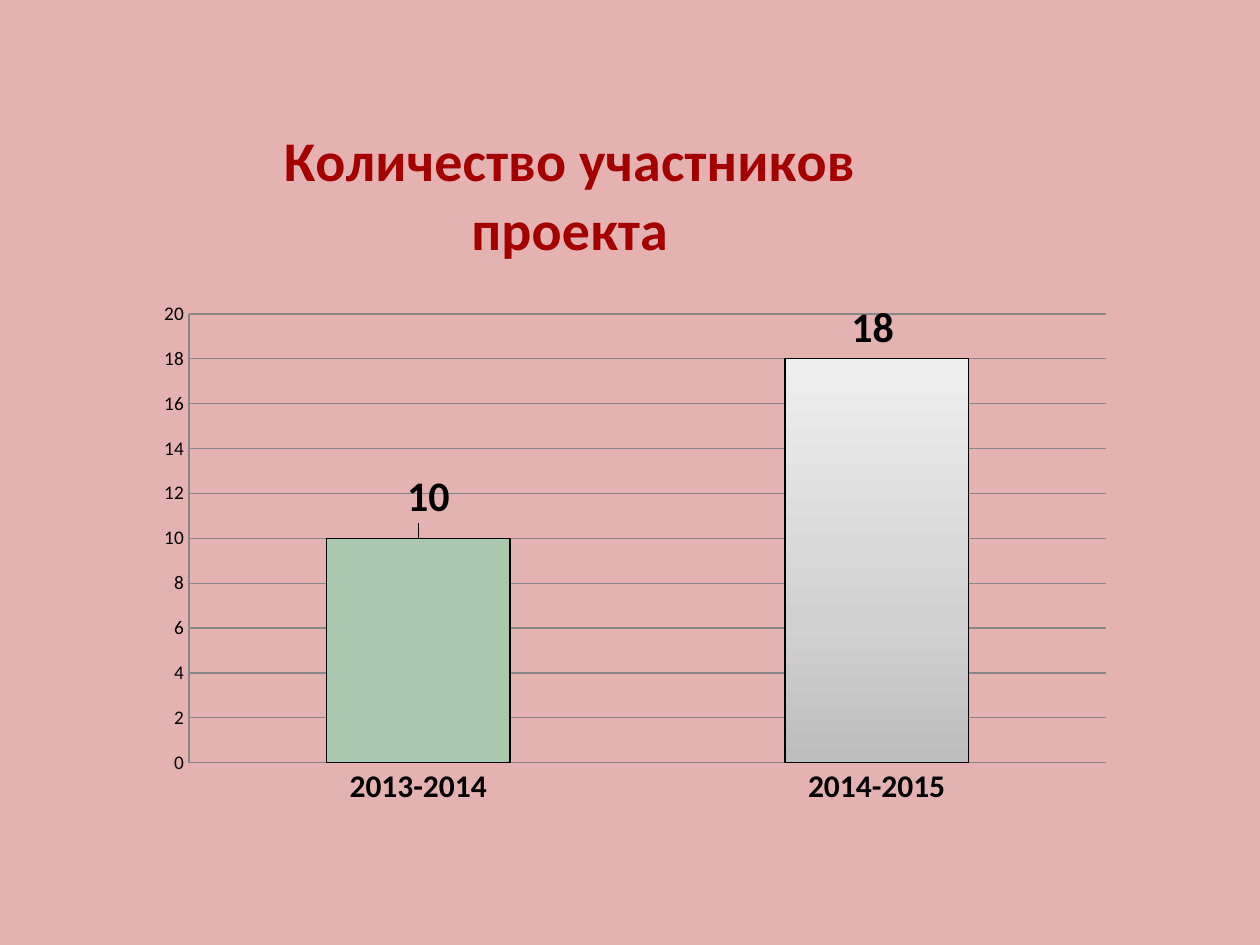
"""Build a slide with a column chart of project participants per school year."""
import copy

from lxml import etree
from pptx import Presentation
from pptx import util as u
from pptx.chart.data import CategoryChartData
from pptx.dml.color import RGBColor
from pptx.enum import chart as kinds
from pptx.oxml import ns

PX = 914400 // 126
CHART_LEFT, CHART_TOP, CHART_WIDTH, CHART_HEIGHT = 144, 116, 983, 704
PINK = RGBColor(0xE5, 0xB2, 0xB2)
RED = RGBColor(0xA4, 0x00, 0x00)
GREEN = RGBColor(0xAA, 0xC8, 0xAD)
BLACK = RGBColor(0x00, 0x00, 0x00)
GRID_GRAY = RGBColor(0x86, 0x86, 0x86)
GRADIENT = [
    (0, RGBColor(0xBD, 0xBD, 0xBD)),
    (0.35, RGBColor(0xD1, 0xD1, 0xD1)),
    (1, RGBColor(0xEE, 0xEE, 0xEE)),
]


def make_layout(**settings):
    layout = etree.Element(ns.qn("c:layout"))
    manual = etree.SubElement(layout, ns.qn("c:manualLayout"))
    for name, value in settings.items():
        if not isinstance(value, str):
            total = CHART_WIDTH if name in "xw" else CHART_HEIGHT
            value = str(round(value / total, 4))
        etree.SubElement(manual, ns.qn(f"c:{name}")).set("val", value)
    return layout


def style_font(font, size, bold, color=BLACK):
    font.name = "Calibri"
    font.size = u.Pt(size)
    font.bold = bold
    font.color.rgb = color


deck = Presentation()
deck.slide_width = 1260 * PX
deck.slide_height = 945 * PX
page = deck.slides.add_slide(deck.slide_layouts[6])
page.background.fill.solid()
page.background.fill.fore_color.rgb = PINK

data = CategoryChartData()
data.categories = ["2013-2014", "2014-2015"]
data.add_series("Series 1", [10, 18])
frame = page.shapes.add_chart(
    kinds.XL_CHART_TYPE.COLUMN_CLUSTERED,
    CHART_LEFT * PX, CHART_TOP * PX, CHART_WIDTH * PX, CHART_HEIGHT * PX, data)
chart = frame.chart
chart.has_legend = False
style_font(chart.font, 10, False)

chart.has_title = True
title = chart.chart_title
title.include_in_layout = False
title_text = title.text_frame
title_text.text = "Количество участников\nпроекта"
for para in title_text.paragraphs:
    style_font(para.font, 32, True, RED)
for old_layout in title._element.findall(ns.qn("c:layout")):
    title._element.remove(old_layout)
title._element.find(ns.qn("c:tx")).addnext(
    make_layout(xMode="edge", yMode="edge", x=136, y=5))

plot_area = chart._chartSpace.chart.plotArea
for old_layout in plot_area.findall(ns.qn("c:layout")):
    plot_area.remove(old_layout)
plot_area.insert(0, make_layout(
    layoutTarget="inner", xMode="edge", yMode="edge", x=45, y=198, w=917, h=449))

value_axis = chart.value_axis
value_axis.minimum_scale, value_axis.maximum_scale = 0, 20
value_axis.major_unit = 2
value_axis.has_major_gridlines = True
for axis, size, bold in [(chart.category_axis, 18, True), (value_axis, 11, False)]:
    axis.major_tick_mark = kinds.XL_TICK_MARK.NONE
    style_font(axis.tick_labels.font, size, bold)
for lined in [chart.category_axis, value_axis, value_axis.major_gridlines]:
    lined.format.line.color.rgb = GRID_GRAY
    lined.format.line.width = u.Pt(0.75)

plot = chart.plots[0]
plot.gap_width = 150
plot.vary_by_categories = False
series = plot.series[0]
fill = series.format.fill
fill.gradient()
fill.gradient_angle = 90
stop_list = series._element.xpath(".//a:gsLst")[0]
stop_list.append(copy.deepcopy(stop_list[0]))
for stop, (position, color) in zip(fill.gradient_stops, GRADIENT):
    stop.position = position
    stop.color.rgb = color

first_point = series.points[0]
first_point.format.fill.solid()
first_point.format.fill.fore_color.rgb = GREEN
for outlined in [series, first_point]:
    outlined.format.line.color.rgb = BLACK
    outlined.format.line.width = u.Pt(0.75)

labels = series.data_labels
labels.show_value = True
labels.position = kinds.XL_LABEL_POSITION.OUTSIDE_END
style_font(labels.font, 24, True)
for index, (shift_x, shift_y) in enumerate([(10, -10), (-4, 0)]):
    label = series.points[index].data_label
    style_font(label.font, 24, True)
    label.position = kinds.XL_LABEL_POSITION.OUTSIDE_END
    label_element = series._element.xpath(f".//c:dLbl[c:idx/@val='{index}']")[0]
    label_element.find(ns.qn("c:idx")).addnext(make_layout(x=shift_x, y=shift_y))

deck.save("out.pptx")
